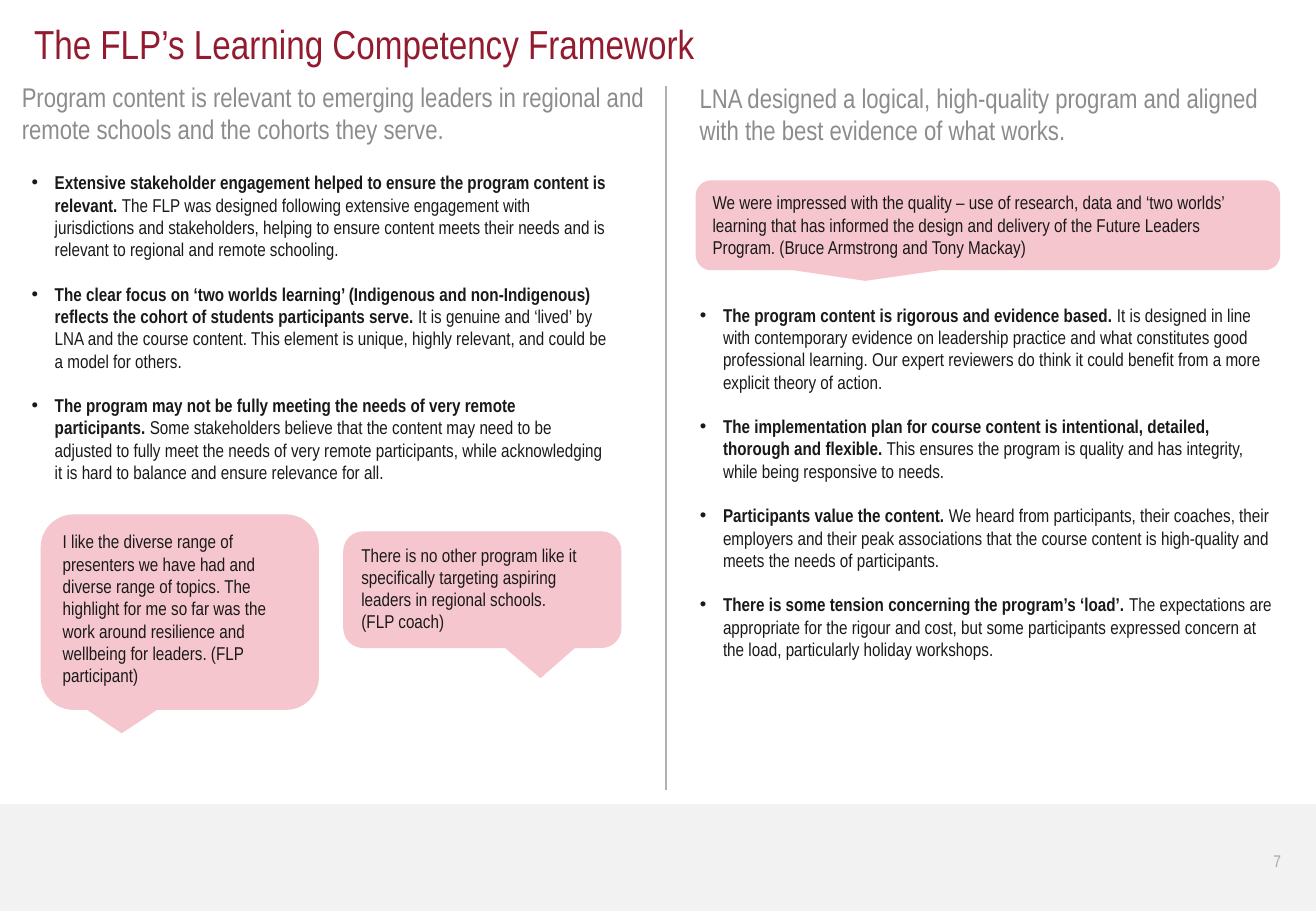
from dataclasses import dataclass

from lxml.etree import SubElement
from pptx import Presentation
from pptx.dml.color import RGBColor
from pptx.enum.shapes import MSO_CONNECTOR, MSO_SHAPE
from pptx.enum.text import MSO_ANCHOR, MSO_AUTO_SIZE, PP_ALIGN
from pptx.oxml.ns import qn
from pptx.util import Inches, Pt


@dataclass(frozen=True)
class Theme:
    font: str = "Arial Narrow"
    title: str = "931B2F"
    heading: str = "8C8C8C"
    body: str = "191919"
    quote: str = "F5C6CD"
    divider: str = "B0B0B0"
    footer: str = "F2F2F2"
    number: str = "A9A9A9"
    paper: str = "FFFFFF"
    title_size: float = 24
    heading_size: float = 16
    body_size: float = 11
    number_size: float = 10
    bullet_gap: float = 13.2
    bullet_indent: float = 0.19


class Page:
    """Places elements by percent of the slide's width and height."""

    def __init__(self, deck, theme):
        self.deck, self.theme = deck, theme
        self.slide = deck.slides.add_slide(deck.slide_layouts[3])
        self.shapes = self.slide.shapes

    def box(self, left, top, width, height):
        across, down = self.deck.slide_width / 100, self.deck.slide_height / 100
        return (round(left * across), round(top * down),
                round(width * across), round(height * down))

    def place(self, element, area):
        element.left, element.top, element.width, element.height = self.box(*area)

    def paint(self, element, color):
        element.fill.solid()
        element.fill.fore_color.rgb = RGBColor.from_string(color)

    def style(self, paragraph, size, color):
        for run in paragraph.runs:
            run.font.name = self.theme.font
            run.font.size = Pt(size)
            run.font.color.rgb = RGBColor.from_string(color)

    def frame(self, element, anchor=MSO_ANCHOR.TOP):
        frame = element.text_frame
        frame.word_wrap = True
        frame.auto_size = MSO_AUTO_SIZE.NONE
        frame.vertical_anchor = anchor
        return frame

    def put_words(self, element, words, size, color,
                  anchor=MSO_ANCHOR.TOP, align=PP_ALIGN.LEFT):
        frame = self.frame(element, anchor)
        frame.text = words
        frame.paragraphs[0].alignment = align
        self.style(frame.paragraphs[0], size, color)
        return frame

    def title(self, words, area):
        heading = self.shapes.title
        self.place(heading, area)
        self.put_words(heading, words, self.theme.title_size, self.theme.title, MSO_ANCHOR.MIDDLE)

    def text(self, words, area, size, color, inset=True, **layout):
        label = self.shapes.add_textbox(*self.box(*area))
        frame = self.put_words(label, words, size, color, **layout)
        if not inset:
            frame.margin_left = frame.margin_right = 0
            frame.margin_top = frame.margin_bottom = 0

    def heading(self, words, area, inset=True):
        self.text(words, area, self.theme.heading_size, self.theme.heading, inset)

    def findings(self, index, points, area):
        body = self.slide.placeholders[index]
        self.place(body, area)
        self.paint(body, self.theme.paper)
        frame = self.frame(body)
        for position, (lead, detail) in enumerate(points):
            point = frame.add_paragraph() if position else frame.paragraphs[0]
            point.text = lead
            point.runs[0].font.bold = True
            point.add_run().text = detail
            point.space_before = Pt(self.theme.bullet_gap if position else 0)
            properties = point._p.get_or_add_pPr()
            indent = Inches(self.theme.bullet_indent)
            properties.set("marL", str(indent))
            properties.set("indent", str(-indent))
            self.style(point, self.theme.body_size, self.theme.body)

    def quote(self, words, area, pointer=(-0.21, 0.62)):
        callout = self.shapes.add_shape(MSO_SHAPE.ROUNDED_RECTANGULAR_CALLOUT, *self.box(*area))
        callout.shadow.inherit = False
        callout.adjustments[0], callout.adjustments[1] = pointer
        self.paint(callout, self.theme.quote)
        callout.line.color.rgb = RGBColor.from_string(self.theme.quote)
        callout.line.width = Pt(0.75)
        self.put_words(callout, words, self.theme.body_size, self.theme.body)

    def band(self, area):
        strip = self.shapes.add_shape(MSO_SHAPE.RECTANGLE, *self.box(*area))
        strip.shadow.inherit = False
        self.paint(strip, self.theme.footer)
        strip.line.fill.background()

    def divider(self, across, top, bottom):
        left, start, _, end = self.box(across, top, 0, bottom)
        rule = self.shapes.add_connector(MSO_CONNECTOR.STRAIGHT, left, start, left, end)
        rule.line.color.rgb = RGBColor.from_string(self.theme.divider)
        rule.line.width = Pt(0.75)
        SubElement(rule._element.spPr, qn("a:effectLst"))


RELEVANCE = [
    ("Extensive stakeholder engagement helped to ensure the program content is relevant. ",
     "The FLP was designed following extensive engagement with jurisdictions and stakeholders, "
     "helping to ensure content meets their needs and is relevant to regional and remote schooling."),
    ("The clear focus on ‘two worlds learning’ (Indigenous and non-Indigenous) reflects the "
     "cohort of students participants serve. ",
     "It is genuine and ‘lived’ by LNA and the course content. This element is unique, highly "
     "relevant, and could be a model for others."),
    ("The program may not be fully meeting the needs of very remote participants. ",
     "Some stakeholders believe that the content may need to be adjusted to fully meet the needs "
     "of very remote participants, while acknowledging it is hard to balance and ensure relevance "
     "for all."),
]
QUALITY = [
    ("The program content is rigorous and evidence based. ",
     "It is designed in line with contemporary evidence on leadership practice and what constitutes "
     "good professional learning. Our expert reviewers do think it could benefit from a more "
     "explicit theory of action."),
    ("The implementation plan for course content is intentional, detailed, thorough and flexible.",
     " This ensures the program is quality and has integrity, while being responsive to needs."),
    ("Participants value the content. ",
     "We heard from participants, their coaches, their employers and their peak associations that "
     "the course content is high-quality and meets the needs of participants."),
    ("There is some tension concerning the program’s ‘load’. ",
     "The expectations are appropriate for the rigour and cost, but some participants expressed "
     "concern at the load, particularly holiday workshops."),
]


def main():
    deck = Presentation()
    deck.slide_width, deck.slide_height = Inches(10.83), Inches(7.5)
    theme = Theme()
    page = Page(deck, theme)

    # Frame of the page
    page.band((0, 88.27, 100, 11.73))
    page.divider(50.6, 9.47, 86.67)
    page.title("The FLP’s Learning Competency Framework", (1.66, 1.33, 95.75, 6.8))
    page.text("7", (94.83, 91.87, 3.42, 5.33), theme.number_size, theme.number,
              anchor=MSO_ANCHOR.MIDDLE, align=PP_ALIGN.RIGHT)

    # Left column: relevance
    page.heading("Program content is relevant to emerging leaders in regional and remote schools "
                 "and the cohorts they serve.", (1.66, 8.8, 48.85, 7.47), inset=False)
    page.findings(1, RELEVANCE, (1.48, 18.13, 45.71, 38.4))
    page.quote("I like the diverse range of presenters we have had and diverse range of topics. "
               "The highlight for me so far was the work around resilience and wellbeing for "
               "leaders. (FLP participant)", (3.14, 56.53, 21.05, 21.33))
    page.quote("There is no other program like it specifically targeting aspiring leaders in "
               "regional schools. \v(FLP coach)", (26.13, 58.4, 21.05, 12.67), (0.21, 0.76))

    # Right column: quality
    page.heading("LNA designed a logical, high-quality program and aligned with the best evidence "
                 "of what works.", (52.26, 8.27, 44.78, 8.53))
    page.quote("We were impressed with the quality – use of research, data and ‘two worlds’ "
               "learning that has informed the design and delivery of the Future Leaders Program. "
               "(Bruce Armstrong and Tony Mackay)", (52.91, 19.87, 44.32, 9.73))
    page.findings(2, QUALITY, (52.26, 32.67, 45.61, 42.4))

    deck.save("out.pptx")


if __name__ == "__main__":
    main()
